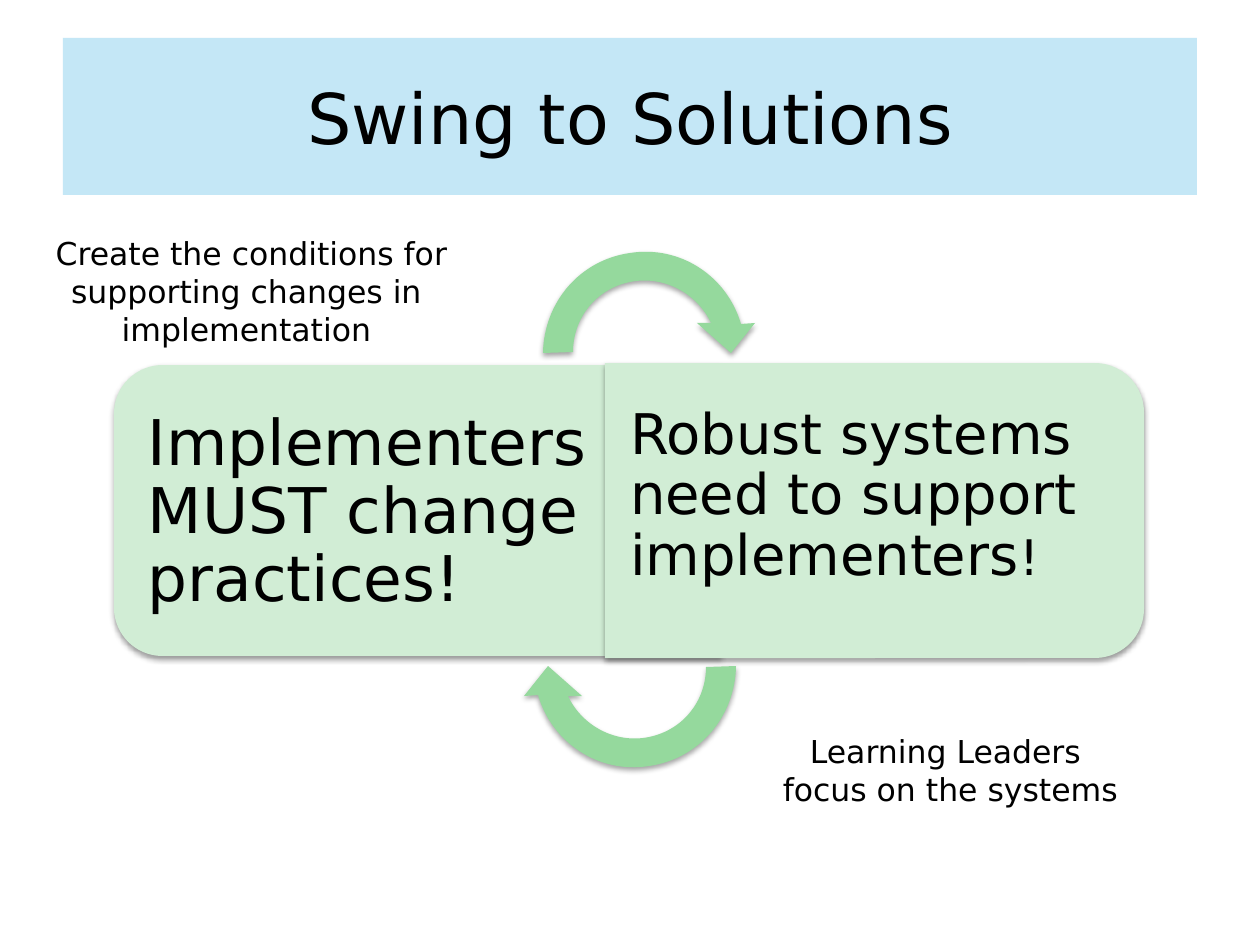
import math
from lxml import etree
from pptx import Presentation, util as u
from pptx.dml.color import RGBColor
from pptx.enum import shapes as sh, text as tx
from pptx.oxml.ns import qn

PX = 914400 / 126
FONT = "DejaVu Sans"
HUES = {"band": "A9DCF2", "card": "D1EDD5", "arrow": "95D99D", "ink": "000000"}


def emu(*vals):
    return [u.Emu(round(v * PX)) for v in vals]


def paint(shape, hue, alpha=None):
    shape.shadow.inherit = False
    shape.fill.solid()
    shape.fill.fore_color.rgb = RGBColor.from_string(HUES[hue])
    shape.line.fill.background()
    if alpha:
        clr = shape.fill._xPr.find(qn("a:solidFill"))[0]
        etree.SubElement(clr, qn("a:alpha"), val=str(alpha * 1000))


def shade(shape, alpha, dist):
    """Soft shadow falling straight down; alpha in percent, dist in points."""
    fx = shape._element.spPr.find(qn("a:effectLst"))
    out = etree.SubElement(fx, qn("a:outerShdw"), blurRad=str(u.Pt(3.1)),
                           dist=str(u.Pt(dist)), dir="5400000", rotWithShape="0")
    clr = etree.SubElement(out, qn("a:srgbClr"), val=HUES["ink"])
    etree.SubElement(clr, qn("a:alpha"), val=str(alpha * 1000))


def write(shape, paras, size, align, pads=(13, 6, 13, 6), gap=None,
          anchor=tx.MSO_ANCHOR.TOP):
    """Fill a shape; each paragraph is a list of run texts."""
    frame = shape.text_frame
    frame.word_wrap = True
    frame.vertical_anchor = anchor
    (frame.margin_left, frame.margin_top,
     frame.margin_right, frame.margin_bottom) = emu(*pads)
    for i, runs in enumerate(paras):
        para = frame.add_paragraph() if i else frame.paragraphs[0]
        para.alignment = align
        if gap:
            para.line_spacing = gap
        for words in runs:
            run = para.add_run()
            run.text = words
            run.font.name = FONT
            run.font.size = u.Pt(size)
            run.font.color.rgb = RGBColor.from_string(HUES["ink"])
    return frame


def title(slide, box, words):
    band = slide.shapes.add_shape(sh.MSO_SHAPE.RECTANGLE, *emu(*box))
    paint(band, "band", 68)
    write(band, [[words]], 40, tx.PP_ALIGN.CENTER, anchor=tx.MSO_ANCHOR.MIDDLE)


def card(slide, box, turn, area, runs, size, pads):
    """Half card, rounded on its outer side, with text in area (offset, size)."""
    x, y, w, h = box
    # The preset is rounded on top, so it is drawn upright and turned
    half = slide.shapes.add_shape(
        sh.MSO_SHAPE.ROUND_2_SAME_RECTANGLE,
        *emu(x + (w - h) / 2, y + (h - w) / 2, h, w))
    half.adjustments[0], half.adjustments[1] = 0.167, 0
    half.rotation = turn
    paint(half, "card")
    shade(half, 38, 1.6)
    dx, dy, tw, th = area
    note = slide.shapes.add_textbox(*emu(x + dx, y + dy, tw, th))
    return write(note, [runs], size, tx.PP_ALIGN.LEFT, pads, 0.9)


def arc(rad, start, end):
    """Two Bezier curves around the origin, as triples of points."""
    step = math.radians(end - start) / 2
    pull = 4 / 3 * math.tan(step / 4)
    curves = []
    for i in range(2):
        a = math.radians(start) + i * step
        b = a + step
        ends = [(math.cos(a) - pull * math.sin(a), math.sin(a) + pull * math.cos(a)),
                (math.cos(b) + pull * math.sin(b), math.sin(b) - pull * math.cos(b)),
                (math.cos(b), math.sin(b))]
        curves.append(("cubicBezTo", [(rad * c, -rad * s) for c, s in ends]))
    return curves


def swing(slide, box, turn):
    """Half-ring arrow about the middle of a square box."""
    x, y, w, h = box
    form = slide.shapes.build_freeform(x, y, scale=PX ** -1 * PX * PX)
    form.add_line_segments([(x + w, y), (x + w, y + h), (x, y + h)])
    arrow = form.convert_to_shape()
    trace = arrow._element.spPr.find(".//" + qn("a:pathLst"))[0]
    for step in list(trace):
        trace.remove(step)
    unit = int(trace.get("w")) / w
    head = [("lnTo", [p]) for p in [(111, -29), (87, 0), (53, -29), (66, -29)]]
    steps = ([("moveTo", [(-101, 0)])] + arc(101, 180, 16.6) + head
             + arc(72, 23.5, 180))
    for kind, pts in steps:
        node = etree.SubElement(trace, qn("a:" + kind))
        for px, py in pts:
            etree.SubElement(node, qn("a:pt"), x=str(round((w / 2 + px) * unit)),
                             y=str(round((h / 2 + py) * unit)))
    etree.SubElement(trace, qn("a:close"))
    arrow.rotation = turn
    paint(arrow, "arrow")
    shade(arrow, 35, 1.8)


def label(slide, box, lines):
    note = slide.shapes.add_textbox(*emu(*box))
    frame = write(note, [[line] for line in lines], 18, tx.PP_ALIGN.CENTER)
    frame.auto_size = tx.MSO_AUTO_SIZE.SHAPE_TO_FIT_TEXT


def main():
    prs = Presentation()
    prs.slide_width, prs.slide_height = emu(1260, 945)
    slide = prs.slides.add_slide(prs.slide_layouts[6])

    title(slide, (63, 38, 1134, 157), "Swing to Solutions")

    # Two halves of the card
    card(slide, (114, 365, 607, 291), 270, (15, 14, 593, 262),
         ["Implementers MUST change practices!"], 36, (19, 32, 28, 32))
    frame = card(slide, (605, 363, 539, 295), 90, (0, 15, 524, 266),
                 ["Robust systems need to support implementers", "!"], 32,
                 (25, 28, 16, 28))
    frame.paragraphs[0].runs[-1].font.size = u.Pt(28)

    # Arrows above and below
    swing(slide, (529, 237, 231, 231), 0)
    swing(slide, (519, 551, 231, 231), 180)

    # Side notes
    label(slide, (0, 228, 493, 127),
          [" Create the conditions for supporting changes in implementation"])
    label(slide, (704, 726, 493, 89),
          ["Learning Leaders ", "focus on the systems"])

    prs.save("out.pptx")


if __name__ == "__main__":
    main()
